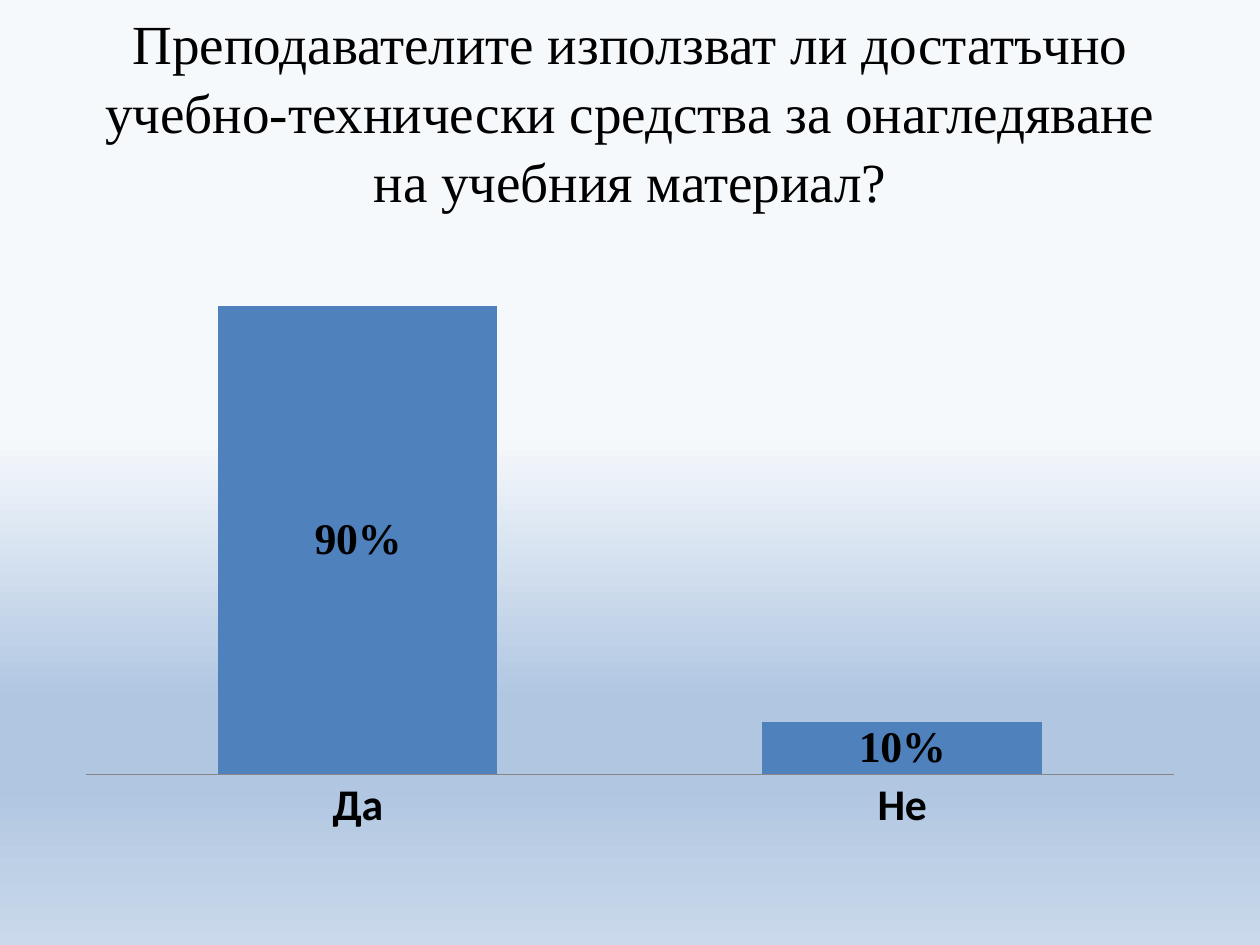
from dataclasses import dataclass

from lxml import etree
from pptx import Presentation
from pptx.chart.data import CategoryChartData
from pptx.dml.color import RGBColor
from pptx.enum.chart import XL_CHART_TYPE, XL_LABEL_POSITION, XL_TICK_MARK
from pptx.enum.text import MSO_ANCHOR, PP_ALIGN
from pptx.oxml.ns import qn
from pptx.util import Pt

COLUMN_STACKED = XL_CHART_TYPE.COLUMN_STACKED
LABEL_CENTER = XL_LABEL_POSITION.CENTER
NO_TICKS = XL_TICK_MARK.NONE
MIDDLE = MSO_ANCHOR.MIDDLE
CENTER = PP_ALIGN.CENTER

PX = 914400 // 126  # EMU in one px
BLANK_LAYOUT = 6


@dataclass(frozen=True)
class Theme:
    title_font: str = "Times New Roman"
    chart_font: str = "Calibri"
    title_size: float = 31.5
    chart_size: int = 18
    label_size: int = 25
    text: str = "000000"
    bar: str = "4F81BD"
    axis: str = "868686"
    background: tuple = ((46, "F6F9FC"), (74, "B0C6E1"),
                         (83, "B0C6E1"), (100, "CAD9EB"))


THEME = Theme()


def scaled(box):
    return [length * PX for length in box]


def style_font(font, name, size, bold=False):
    font.name = name
    font.size = Pt(size)
    font.bold = bold
    font.color.rgb = RGBColor.from_string(THEME.text)


def paint_background(slide):
    fill = slide.background.fill
    fill.gradient()
    fill.gradient_angle = 270  # top to bottom
    stops = slide.element.find(".//" + qn("a:gsLst"))
    for stop in list(stops):
        stops.remove(stop)
    for percent, color in THEME.background:
        stop = etree.SubElement(stops, qn("a:gs"), pos=str(percent * 1000))
        etree.SubElement(stop, qn("a:srgbClr"), val=color)


def add_title(slide, box, text):
    frame = slide.shapes.add_textbox(*scaled(box)).text_frame
    frame.word_wrap = True
    frame.vertical_anchor = MIDDLE
    paragraph = frame.paragraphs[0]
    paragraph.text = text
    paragraph.alignment = CENTER
    paragraph.line_spacing = 1.04
    style_font(paragraph.font, THEME.title_font, THEME.title_size)


def add_answer_chart(slide, box, answers):
    data = CategoryChartData(number_format="0%")
    data.categories = list(answers)
    data.add_series("Series 1", list(answers.values()))
    chart = slide.shapes.add_chart(COLUMN_STACKED, *scaled(box), data).chart
    chart.has_legend = False
    chart.has_title = False
    style_font(chart.font, THEME.chart_font, THEME.chart_size)

    # Axes
    chart.value_axis.visible = False
    chart.value_axis.has_major_gridlines = False
    category_axis = chart.category_axis
    category_axis.major_tick_mark = NO_TICKS
    category_axis.format.line.color.rgb = RGBColor.from_string(THEME.axis)
    style_font(category_axis.tick_labels.font, THEME.chart_font,
               THEME.label_size, bold=True)

    # Columns and their labels
    plot = chart.plots[0]
    plot.gap_width = 95
    plot.overlap = 100
    plot.vary_by_categories = False
    series = plot.series[0]
    series.format.fill.solid()
    series.format.fill.fore_color.rgb = RGBColor.from_string(THEME.bar)
    labels = series.data_labels
    labels.show_value = True
    labels.number_format = "0%"
    labels.number_format_is_linked = False
    labels.position = LABEL_CENTER
    style_font(labels.font, THEME.title_font, THEME.label_size, bold=True)


def main():
    presentation = Presentation()
    presentation.slide_width = 1260 * PX
    presentation.slide_height = 945 * PX
    slide = presentation.slides.add_slide(
        presentation.slide_layouts[BLANK_LAYOUT])
    paint_background(slide)
    add_title(slide, (63, 0, 1134, 220),
              "Преподавателите използват ли достатъчно учебно-технически "
              "средства за онагледяване на учебния материал?")
    add_answer_chart(slide, (63, 242, 1134, 602), {"Да": 0.9, "Не": 0.1})
    presentation.save("out.pptx")


if __name__ == "__main__":
    main()
